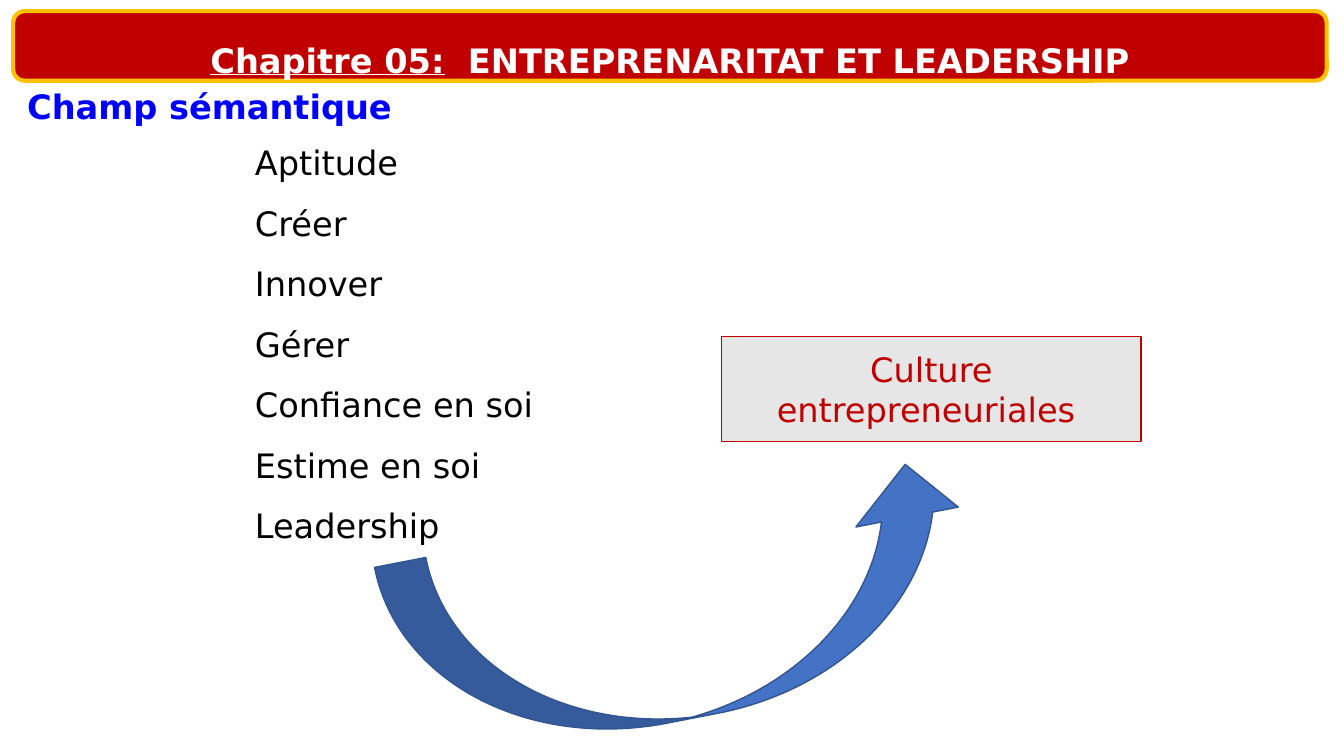
from pptx import Presentation
from pptx import util as u
from pptx.dml.color import RGBColor
from pptx.enum import shapes, text

RED = RGBColor(0xC0, 0x00, 0x00)
GOLD = RGBColor(0xFF, 0xC0, 0x00)
WHITE = RGBColor(0xFF, 0xFF, 0xFF)
BLACK = RGBColor(0x00, 0x00, 0x00)
BLUE = RGBColor(0x00, 0x00, 0xFF)
ARROW_BLUE = RGBColor(0x44, 0x72, 0xC4)
ARROW_EDGE = RGBColor(0x32, 0x54, 0x91)
GREY = RGBColor(0xE7, 0xE6, 0xE6)

Kind = shapes.MSO_SHAPE
Align = text.PP_ALIGN
Anchor = text.MSO_ANCHOR

TERMS = ["Aptitude", "Créer", "Innover", "Gérer",
         "Confiance en soi", "Estime en soi", "Leadership"]


class LessonSlide:
    font = "DejaVu Sans"
    size = u.Pt(24)
    columns = rows = 100

    def __init__(self, presentation):
        self.column = presentation.slide_width / self.columns
        self.row = presentation.slide_height / self.rows
        self.slide = presentation.slides.add_slide(presentation.slide_layouts[6])

    def place(self, left, top, width, height):
        return (round(left * self.column), round(top * self.row),
                round(width * self.column), round(height * self.row))

    def shape(self, kind, box, fill, line, weight, rotation=0):
        shape = self.slide.shapes.add_shape(kind, *self.place(*box))
        shape.shadow.inherit = False
        shape.fill.solid()
        shape.fill.fore_color.rgb = fill
        shape.line.color.rgb = line
        shape.line.width = u.Pt(weight)
        shape.rotation = rotation
        return shape

    def text_box(self, box):
        return self.slide.shapes.add_textbox(*self.place(*box))

    def add_text(self, shape, paragraphs, color, align=Align.LEFT,
                 anchor=Anchor.TOP, spacing=1.0, bold=False, wrap=True):
        frame = shape.text_frame
        frame.word_wrap = wrap
        frame.vertical_anchor = anchor
        for index, runs in enumerate(paragraphs):
            paragraph = frame.add_paragraph() if index else frame.paragraphs[0]
            paragraph.alignment = align
            paragraph.line_spacing = spacing
            for words, underline in runs:
                run = paragraph.add_run()
                run.text = words
                run.font.name = self.font
                run.font.size = self.size
                run.font.bold = bold
                run.font.underline = underline
                run.font.color.rgb = color


def main():
    presentation = Presentation()
    presentation.slide_width = u.Inches(13.33)
    presentation.slide_height = u.Inches(7.5)
    lesson = LessonSlide(presentation)

    banner = lesson.shape(Kind.FLOWCHART_ALTERNATE_PROCESS,
                          (0.98, 1.47, 97.73, 9.2), RED, GOLD, 3)
    lesson.add_text(banner, [[("Chapitre 05:", True),
                              ("  ENTREPRENARITAT ET LEADERSHIP", False)]],
                    WHITE, Align.CENTER, spacing=1.5, bold=True)

    heading = lesson.text_box((1.28, 10.67, 29.55, 6.67))
    lesson.add_text(heading, [[("Champ sémantique", False)]], BLUE,
                    bold=True, wrap=False)

    term_list = lesson.text_box((18.23, 15.47, 25.95, 69.07))
    lesson.add_text(term_list, [[(term, False)] for term in TERMS], BLACK,
                    Align.JUSTIFY, spacing=1.5)

    lesson.shape(Kind.CURVED_UP_ARROW, (28.95, 67.33, 44.1, 27.6),
                 ARROW_BLUE, ARROW_EDGE, 1, rotation=349)

    culture = lesson.shape(Kind.RECTANGLE, (53.7, 44.53, 31.2, 13.87),
                           GREY, RED, 1)
    lesson.add_text(culture, [[("Culture entrepreneuriales ", False)]], RED,
                    Align.CENTER, Anchor.MIDDLE)

    presentation.save("out.pptx")


if __name__ == "__main__":
    main()
